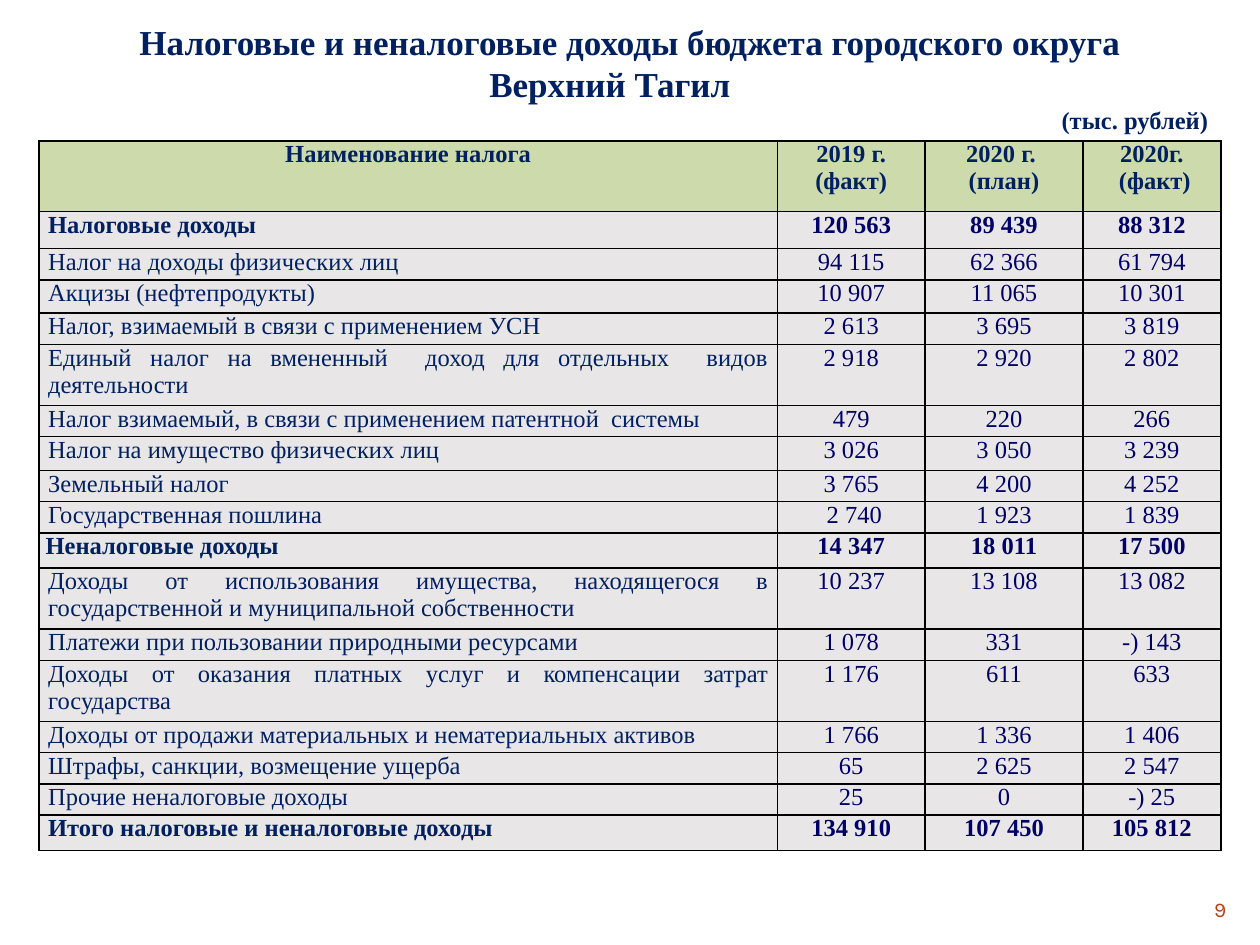
from dataclasses import dataclass

from pptx import Presentation
from pptx.dml.color import RGBColor
from pptx.enum.text import MSO_ANCHOR, MSO_AUTO_SIZE, PP_ALIGN
from pptx.oxml import parse_xml
from pptx.oxml.ns import nsdecls
from pptx.util import Cm, Pt

LEFT, CENTER, RIGHT, JUSTIFY = (
    PP_ALIGN.LEFT, PP_ALIGN.CENTER, PP_ALIGN.RIGHT, PP_ALIGN.JUSTIFY)
TOP, MIDDLE = MSO_ANCHOR.TOP, MSO_ANCHOR.MIDDLE
FIXED_SIZE = MSO_AUTO_SIZE.NONE

NAVY = RGBColor(0x00, 0x20, 0x60)
INDIGO = RGBColor(0x00, 0x00, 0x66)
GREEN = RGBColor(0xCC, 0xDA, 0xAC)
GREY = RGBColor(0xE9, 0xE6, 0xE7)
RUST = RGBColor(0xBA, 0x40, 0x14)

SERIF, SANS = "Times New Roman", "Karla"
TITLE_ONLY = 5
COLUMN_WIDTHS = (14.88, 2.98, 3.18, 2.78)
HEADER_HEIGHT, LINE_HEIGHT, TWO_LINES = 1.42, 0.63, 1.23
NARROW, WIDE = Cm(0.13), Cm(0.18)


@dataclass
class Income:
    name: str
    values: tuple[str, str, str]
    height: float = LINE_HEIGHT
    bold: bool = False
    align: int = JUSTIFY
    inset: int = WIDE


HEADINGS = ("Наименование налога", "2019 г.\n(факт)",
            "2020 г. \n(план)", "2020г.\n (факт)")

INCOMES = [
    Income("Налоговые доходы", ("120 563", "89 439", "88 312"), 0.75, bold=True),
    Income("Налог на доходы физических лиц", ("94 115", "62 366", "61 794")),
    Income("Акцизы (нефтепродукты)", ("10 907", "11 065", "10 301"), 0.67),
    Income("Налог, взимаемый в связи с применением УСН",
           ("2 613", "3 695", "3 819")),
    Income("Единый налог на вмененный  доход для отдельных  видов деятельности",
           ("2 918", "2 920", "2 802"), TWO_LINES),
    Income("Налог взимаемый, в связи с применением патентной  системы",
           ("479", "220", "266")),
    Income("Налог на имущество физических лиц",
           ("3 026", "3 050", "3 239"), 0.68),
    Income("Земельный налог", ("3 765", "4 200", "4 252")),
    Income("Государственная пошлина", (" 2 740", "1 923", "1 839")),
    Income("Неналоговые доходы", ("14 347", "18 011", "17 500"), 0.71,
           bold=True, align=LEFT, inset=NARROW),
    Income("Доходы от использования имущества, находящегося в "
           "государственной и муниципальной собственности",
           ("10 237", "13 108", "13 082"), TWO_LINES),
    Income("Платежи при пользовании природными ресурсами",
           ("1 078", "331", "-) 143")),
    Income("Доходы от оказания платных услуг и компенсации затрат государства",
           ("1 176", "611", "633"), TWO_LINES),
    Income("Доходы от продажи материальных и нематериальных активов",
           ("1 766", "1 336", "1 406")),
    Income("Штрафы, санкции, возмещение ущерба", ("65", "2 625", "2 547")),
    Income("Прочие неналоговые доходы", ("25", "0", "-) 25")),
    Income("Итого налоговые и неналоговые доходы",
           ("134 910", "107 450", "105 812"), 0.71, bold=True),
]


def format_paragraph(para, align: int, size: float, color: RGBColor,
                     bold: bool = False, font: str = SERIF) -> None:
    para.alignment = align
    for span in para.runs:
        span.font.name = font
        span.font.size = Pt(size)
        span.font.bold = bold
        span.font.color.rgb = color


def add_borders(cell) -> None:
    properties = cell._tc.get_or_add_tcPr()
    for side in ("lnL", "lnR", "lnT", "lnB"):
        properties.append(parse_xml(
            f'<a:{side} {nsdecls("a")} w="{Pt(1)}"><a:solidFill>'
            f'<a:srgbClr val="000000"/></a:solidFill></a:{side}>'))


def fill_cell(cell, text: str, fill: RGBColor, color: RGBColor, bold: bool,
              align: int = CENTER, inset: int = NARROW) -> None:
    add_borders(cell)
    cell.fill.solid()
    cell.fill.fore_color.rgb = fill
    cell.margin_left = cell.margin_right = inset
    cell.margin_top = cell.margin_bottom = 0
    cell.vertical_anchor = TOP
    cell.text_frame.text = text
    for para in cell.text_frame.paragraphs:
        format_paragraph(para, align, 14, color, bold)


def add_title(page) -> None:
    title = page.shapes.title
    title.left, title.top, title.width, title.height = (
        Cm(0.79), Cm(0.28), Cm(23.82), Cm(2.57))
    frame = title.text_frame
    frame.text = ("Налоговые и неналоговые доходы бюджета городского округа\n"
                  "Верхний Тагил\n(тыс. рублей)")
    frame.auto_size = FIXED_SIZE
    frame.word_wrap = True
    frame.vertical_anchor = MIDDLE
    first, town, unit = frame.paragraphs
    format_paragraph(first, CENTER, 20, NAVY, True)
    format_paragraph(town, LEFT, 20, NAVY, True)
    format_paragraph(unit, RIGHT, 14, NAVY, True)
    # The town name is indented to sit slightly left of centre
    town._p.get_or_add_pPr().set("marL", str(Cm(8.82)))


def add_income_table(page) -> None:
    table = page.shapes.add_table(
        len(INCOMES) + 1, len(COLUMN_WIDTHS),
        Cm(0.79), Cm(2.84), Cm(sum(COLUMN_WIDTHS)), Cm(14.3)).table
    table.first_row = table.horz_banding = False
    for column, width in zip(table.columns, COLUMN_WIDTHS):
        column.width = Cm(width)

    # Header row
    table.rows[0].height = Cm(HEADER_HEIGHT)
    for index, heading in enumerate(HEADINGS):
        fill_cell(table.cell(0, index), heading, GREEN, NAVY, True)

    # One row for each kind of income
    for row, income in enumerate(INCOMES, start=1):
        table.rows[row].height = Cm(income.height)
        fill_cell(table.cell(row, 0), income.name, GREY, NAVY, income.bold,
                  income.align, income.inset)
        for index, value in enumerate(income.values, start=1):
            fill_cell(table.cell(row, index), value, GREY, INDIGO, income.bold)


def add_page_number(page) -> None:
    box = page.shapes.add_textbox(Cm(22.86), Cm(17.98), Cm(2.11), Cm(0.69))
    frame = box.text_frame
    frame.word_wrap = True
    frame.vertical_anchor = MIDDLE
    frame.text = "9"
    format_paragraph(frame.paragraphs[0], RIGHT, 12, RUST, font=SANS)


def main() -> None:
    deck = Presentation()
    deck.slide_width, deck.slide_height = Cm(25.4), Cm(19.05)
    page = deck.slides.add_slide(deck.slide_layouts[TITLE_ONLY])
    add_title(page)
    add_income_table(page)
    add_page_number(page)
    deck.save("out.pptx")


if __name__ == "__main__":
    main()
